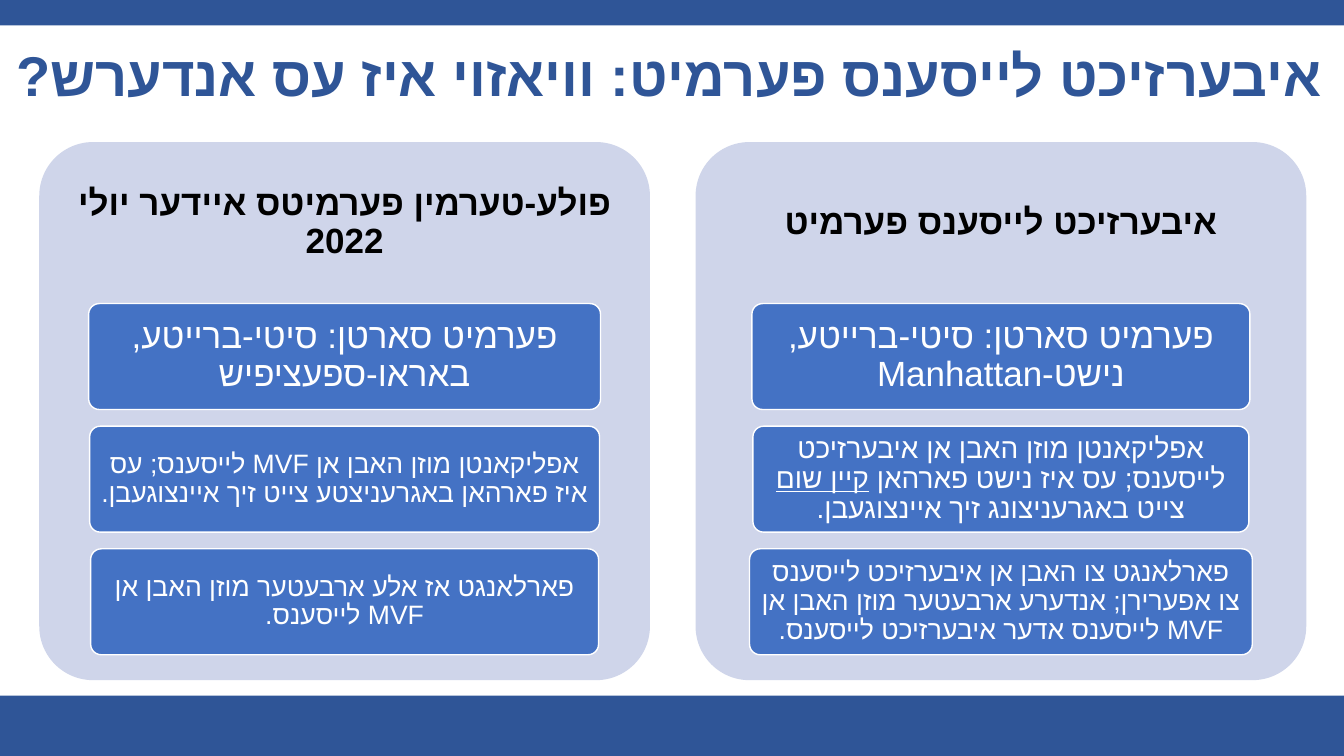
from pptx import Presentation
from pptx.dml.color import RGBColor
from pptx.enum.shapes import MSO_SHAPE
from pptx.enum.text import MSO_ANCHOR, PP_ALIGN
from pptx.oxml.ns import qn
from pptx.util import Cm, Pt
from lxml import etree

RECTANGLE, ROUNDED = MSO_SHAPE.RECTANGLE, MSO_SHAPE.ROUNDED_RECTANGLE
MIDDLE, CENTER = MSO_ANCHOR.MIDDLE, PP_ALIGN.CENTER

TITLE = "איבערזיכט לייסענס פערמיט: וויאזוי איז עס אנדערש?"
COLUMNS = [
    {
        "heading": "פולע-טערמין פערמיטס איידער יולי 2022",
        "boxes": [
            (12.9, 25, ["פערמיט סארטן: סיטי-ברייטע, באראו-ספעציפיש"]),
            (12.85, 19, ["אפליקאנטן מוזן האבן אן MVF לייסענס; עס איז פארהאן באגרעניצטע צייט זיך איינצוגעבן."]),
            (12.8, 19, ["פארלאנגט אז אלע ארבעטער מוזן האבן אן MVF לייסענס."]),
        ],
    },
    {
        "heading": "איבערזיכט לייסענס פערמיט",
        "boxes": [
            (12.55, 25, ["פערמיט סארטן: סיטי-ברייטע, נישט-Manhattan"]),
            (12.5, 20, ["אפליקאנטן מוזן האבן אן איבערזיכט לייסענס; עס איז נישט פארהאן ",
                        "קיין שום", " צייט באגרעניצונג זיך איינצוגעבן."]),
            (12.67, 19, ["פארלאנגט צו האבן אן איבערזיכט לייסענס צו אפערירן; "
                         "אנדערע ארבעטער מוזן האבן אן MVF לייסענס אדער איבערזיכט לייסענס."]),
        ],
    },
]
THEME = {
    "font": "Arial", "title_size": 40, "heading_size": 25,
    "band": RGBColor(0x2F, 0x55, 0x97), "panel": RGBColor(0xCF, 0xD5, 0xEA),
    "box": RGBColor(0x44, 0x72, 0xC4), "white": RGBColor(255, 255, 255),
    "black": RGBColor(0, 0, 0),
}
PAGE_WIDTH, PAGE_HEIGHT = 33.87, 19.05
TOP_BAND, BOTTOM_BAND = 0.64, 1.52
PANEL_LEFT, PANEL_TOP, PANEL_WIDTH, PANEL_HEIGHT = 0.99, 3.58, 15.39, 13.56
PANEL_STEP = 16.54
HEADING_HEIGHT = 4.07
BOX_TOP, BOX_HEIGHT, BOX_STEP = 7.65, 2.67, 3.09


def add_block(page, kind, area, fill, outline=None):
    block = page.shapes.add_shape(kind, *map(Cm, area))
    block.shadow.inherit = False
    block.fill.solid()
    block.fill.fore_color.rgb = fill
    if outline is None:
        block.line.fill.background()
    else:
        block.line.color.rgb = outline
        block.line.width = Pt(1)
    if kind == ROUNDED:
        block.adjustments[0] = 0.1
    return block


def write(box, parts, size, color, bold=False, margins=(0.25, 0.25)):
    frame = box.text_frame
    frame.word_wrap = True
    frame.vertical_anchor = MIDDLE
    frame.margin_left = frame.margin_right = Cm(margins[0])
    frame.margin_top = frame.margin_bottom = Cm(margins[1])
    para = frame.paragraphs[0]
    para.alignment = CENTER
    para.line_spacing = 0.9
    for index, words in enumerate(parts):
        span = para.add_run()
        span.text = words
        if index % 2:
            span.font.underline = True
    font = para.font
    font.name, font.size, font.bold = THEME["font"], Pt(size), bold
    font.color.rgb = color
    properties = para._p.get_or_add_pPr()
    properties.set("rtl", "1")
    script_font = etree.SubElement(properties.find(qn("a:defRPr")), qn("a:cs"))
    script_font.set("typeface", THEME["font"])


def add_column(page, left, column):
    add_block(page, ROUNDED, (left, PANEL_TOP, PANEL_WIDTH, PANEL_HEIGHT), THEME["panel"])
    heading = page.shapes.add_textbox(*map(Cm, (left, PANEL_TOP, PANEL_WIDTH, HEADING_HEIGHT)))
    write(heading, [column["heading"]], THEME["heading_size"], THEME["black"], bold=True)
    for row, (width, size, parts) in enumerate(column["boxes"]):
        area = (left + (PANEL_WIDTH - width) / 2, BOX_TOP + row * BOX_STEP, width, BOX_HEIGHT)
        box = add_block(page, ROUNDED, area, THEME["box"], THEME["white"])
        write(box, parts, size, THEME["white"], margins=(0.14, 0.1))


def main():
    deck = Presentation()
    deck.slide_width, deck.slide_height = Cm(PAGE_WIDTH), Cm(PAGE_HEIGHT)
    page = deck.slides.add_slide(deck.slide_layouts[6])
    for top, height in ((0, TOP_BAND), (PAGE_HEIGHT - BOTTOM_BAND, BOTTOM_BAND)):
        add_block(page, RECTANGLE, (0, top, PAGE_WIDTH, height), THEME["band"])
    title = page.shapes.add_textbox(Cm(-0.33), Cm(1.02), Cm(34.39), Cm(1.9))
    write(title, [TITLE], THEME["title_size"], THEME["band"], bold=True, margins=(0.25, 0.13))
    for index, column in enumerate(COLUMNS):
        add_column(page, PANEL_LEFT + index * PANEL_STEP, column)
    deck.save("out.pptx")


if __name__ == "__main__":
    main()
